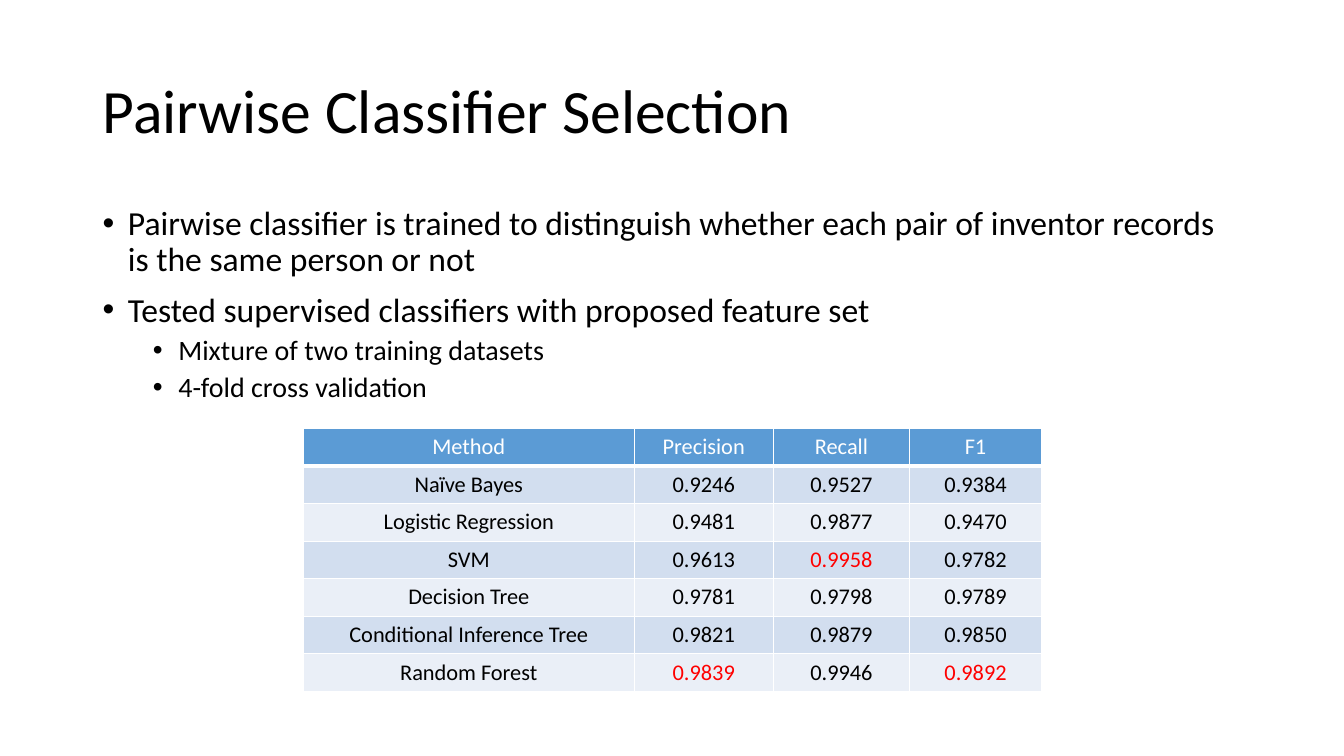
from lxml import etree
from pptx import Presentation
from pptx import util as u
from pptx.dml import color
from pptx.enum import text
from pptx.oxml import ns

BLACK, WHITE, RED = "000000", "FFFFFF", "FF0000"
HEADER, BANDS = "5B9BD5", ("EAEFF7", "D2DEEF")


def rgb(value):
    return color.RGBColor.from_string(value)


def add_span(para, words, size, shade):
    span = para.add_run()
    span.text = words
    span.font.name = "Calibri"
    span.font.size = u.Pt(size)
    span.font.bold = False
    span.font.color.rgb = rgb(shade)


deck = Presentation()
deck.slide_width, deck.slide_height = u.Cm(33.87), u.Cm(19.05)
page = deck.slides.add_slide(deck.slide_layouts[1])

title, body = page.shapes.title, page.placeholders[1]
for box, top, height in ((title, 1.01, 3.68), (body, 5.08, 12.09)):
    box.left, box.top = u.Cm(2.33), u.Cm(top)
    box.width, box.height = u.Cm(29.21), u.Cm(height)
    box.text_frame.word_wrap = True
    box.text_frame.auto_size = text.MSO_AUTO_SIZE.NONE

title.text_frame.vertical_anchor = text.MSO_ANCHOR.MIDDLE
para = title.text_frame.paragraphs[0]
para.alignment = text.PP_ALIGN.LEFT
para.line_spacing = 0.9
add_span(para, "Pairwise Classifier Selection", 44, BLACK)

points = [
    (0, "Pairwise classifier is trained to distinguish whether each pair "
        "of inventor records is the same person or not"),
    (0, "Tested supervised classifiers with proposed feature set"),
    (1, "Mixture of two training datasets"),
    (1, "4-fold cross validation"),
]
for index, (level, words) in enumerate(points):
    frame = body.text_frame
    para = frame.add_paragraph() if index else frame.paragraphs[0]
    para.level = level
    para.line_spacing = 0.9
    para.space_before = u.Pt((10, 5)[level])
    props = para._p.get_or_add_pPr()
    props.set("marL", str(u.Cm((0.64, 1.91)[level])))
    props.set("indent", str(u.Cm(-0.64)))
    etree.SubElement(props, ns.qn("a:buFont"), typeface="Arial")
    etree.SubElement(props, ns.qn("a:buChar"), char="•")
    add_span(para, words, (24, 20)[level], BLACK)

scores = [
    ("Method", "Precision", "Recall", "F1"),
    ("Naïve Bayes", "0.9246", "0.9527", "0.9384"),
    ("Logistic Regression", "0.9481", "0.9877", "0.9470"),
    ("SVM", "0.9613", "0.9958", "0.9782"),
    ("Decision Tree", "0.9781", "0.9798", "0.9789"),
    ("Conditional Inference Tree", "0.9821", "0.9879", "0.9850"),
    ("Random Forest", "0.9839", "0.9946", "0.9892"),
]
best = [max(column) for column in list(zip(*scores[1:]))[1:]]
widths = (8.33, 3.51, 3.43, 3.33)
row_height = 0.94
grid = page.shapes.add_table(
    len(scores), len(widths), u.Cm(7.65), u.Cm(10.8),
    u.Cm(sum(widths)), u.Cm(row_height * len(scores))).table
for column, width in zip(grid.columns, widths):
    column.width = u.Cm(width)

for row, values in enumerate(scores):
    grid.rows[row].height = u.Cm(row_height)
    for col, value in enumerate(values):
        cell = grid.cell(row, col)
        props = cell._tc.get_or_add_tcPr()
        for side in ("lnL", "lnR", "lnT", "lnB"):
            weight = 3 if row == 0 and side == "lnB" else 1
            line = etree.SubElement(props, ns.qn("a:" + side), w=str(u.Pt(weight)))
            paint = etree.SubElement(line, ns.qn("a:solidFill"))
            etree.SubElement(paint, ns.qn("a:srgbClr"), val=WHITE)
        cell.fill.solid()
        cell.fill.fore_color.rgb = rgb(BANDS[row % 2] if row else HEADER)
        para = cell.text_frame.paragraphs[0]
        para.alignment = text.PP_ALIGN.CENTER
        shade = RED if value in best else BLACK
        add_span(para, value, 16, shade if row else WHITE)

deck.save("out.pptx")
